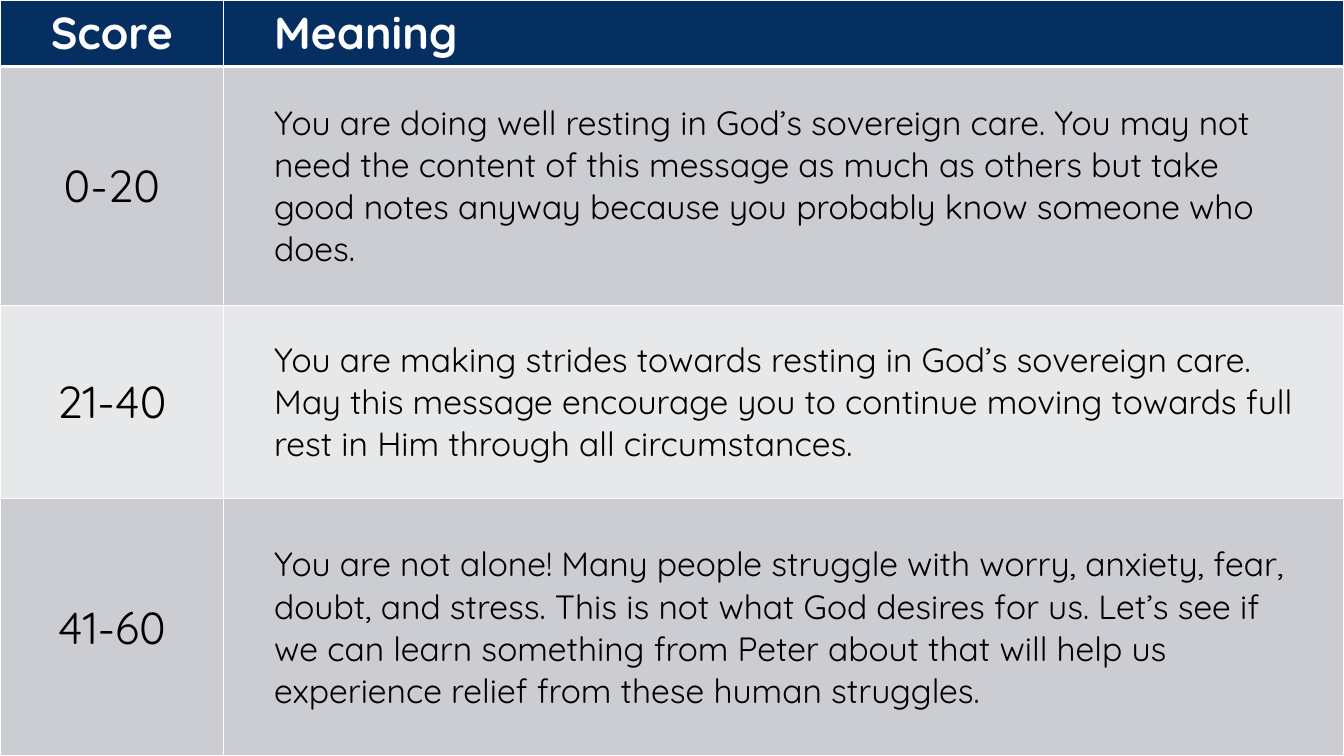
"""Build a slide with a table that explains the meaning of each score range."""
from dataclasses import dataclass

from lxml.etree import SubElement
from pptx import Presentation
from pptx.dml.color import RGBColor
from pptx.enum.text import MSO_ANCHOR as ANCHOR, PP_ALIGN as ALIGN
from pptx.oxml.ns import qn
from pptx.slide import Slide
from pptx.table import _Cell as Cell
from pptx.util import Inches, Pt

FONT = "Quicksand"
WHITE = RGBColor(0xFF, 0xFF, 0xFF)
BLACK = RGBColor(0x00, 0x00, 0x00)
NAVY = RGBColor(0x05, 0x2F, 0x61)
GREY = RGBColor(0xCC, 0xCD, 0xD2)
LIGHT_GREY = RGBColor(0xE7, 0xE8, 0xEA)
SKY = RGBColor(0x4A, 0xA8, 0xE7)
OCEAN = RGBColor(0x06, 0x58, 0x8E)

SLIDE_W, SLIDE_H = 13.33, 7.5
COL_WIDTHS = (2.22, 11.11)
THIN, THICK = 1, 3


@dataclass(frozen=True)
class ScoreRow:
    score: str
    meaning: str
    height: float
    fill: RGBColor
    header: bool = False


ROWS = (
    ScoreRow("Score", "Meaning", 0.66, NAVY, header=True),
    ScoreRow(
        "0-20",
        "You are doing well resting in God’s sovereign care. You may not need the "
        "content of this message as much as others but take good notes anyway "
        "because you probably know someone who does.",
        2.37, GREY),
    ScoreRow(
        "21-40",
        "You are making strides towards resting in God’s sovereign care. May this "
        "message encourage you to continue moving towards full rest in Him through "
        "all circumstances.",
        1.92, LIGHT_GREY),
    ScoreRow(
        "41-60",
        "You are not alone! Many people struggle with worry, anxiety, fear, doubt, "
        "and stress. This is not what God desires for us. Let’s see if we can learn "
        "something from Peter about that will help us experience relief from these "
        "human struggles.",
        2.55, GREY),
)


def set_background(slide: Slide) -> None:
    fill = slide.background.fill
    fill.gradient()
    fill.gradient_angle = 258
    for stop, position, color in zip(fill.gradient_stops, (0.13, 1), (SKY, OCEAN)):
        stop.position = position
        stop.color.rgb = color


def set_borders(cell: Cell, top: int, bottom: int) -> None:
    tc_pr = cell._tc.get_or_add_tcPr()
    widths = {"a:lnL": THIN, "a:lnR": THIN, "a:lnT": top, "a:lnB": bottom}
    for tag, width in widths.items():
        ln = SubElement(tc_pr, qn(tag), w=str(Pt(width)))
        fill = SubElement(ln, qn("a:solidFill"))
        SubElement(fill, qn("a:srgbClr"), val=str(WHITE))


def fill_cell(cell: Cell, text: str, size: int, align: ALIGN, row: ScoreRow) -> None:
    cell.fill.solid()
    cell.fill.fore_color.rgb = row.fill
    cell.vertical_anchor = ANCHOR.TOP if row.header else ANCHOR.MIDDLE
    p = cell.text_frame.paragraphs[0]
    p.text = text
    p.alignment = align
    font = p.runs[0].font
    font.name = FONT
    font.size = Pt(size)
    font.bold = row.header
    font.color.rgb = WHITE if row.header else BLACK


def add_score_table(slide: Slide) -> None:
    table = slide.shapes.add_table(
        len(ROWS), len(COL_WIDTHS), 0, 0, Inches(SLIDE_W), Inches(SLIDE_H)).table
    for column, width in zip(table.columns, COL_WIDTHS):
        column.width = Inches(width)
    for i, row in enumerate(ROWS):
        table.rows[i].height = Inches(row.height)
        score, meaning = table.cell(i, 0), table.cell(i, 1)
        for cell in (score, meaning):
            set_borders(cell, THICK if i == 1 else THIN, THICK if row.header else THIN)
        fill_cell(score, row.score, 32, ALIGN.CENTER, row)
        fill_cell(meaning, row.meaning, 32 if row.header else 24, ALIGN.LEFT, row)
        meaning.margin_left = Inches(0.5)
        meaning.margin_right = Inches(0.1 if row.header else 0.5)


def main() -> None:
    prs = Presentation()
    prs.slide_width, prs.slide_height = Inches(SLIDE_W), Inches(SLIDE_H)
    slide = prs.slides.add_slide(prs.slide_layouts[6])
    set_background(slide)
    add_score_table(slide)
    prs.save("out.pptx")


if __name__ == "__main__":
    main()
